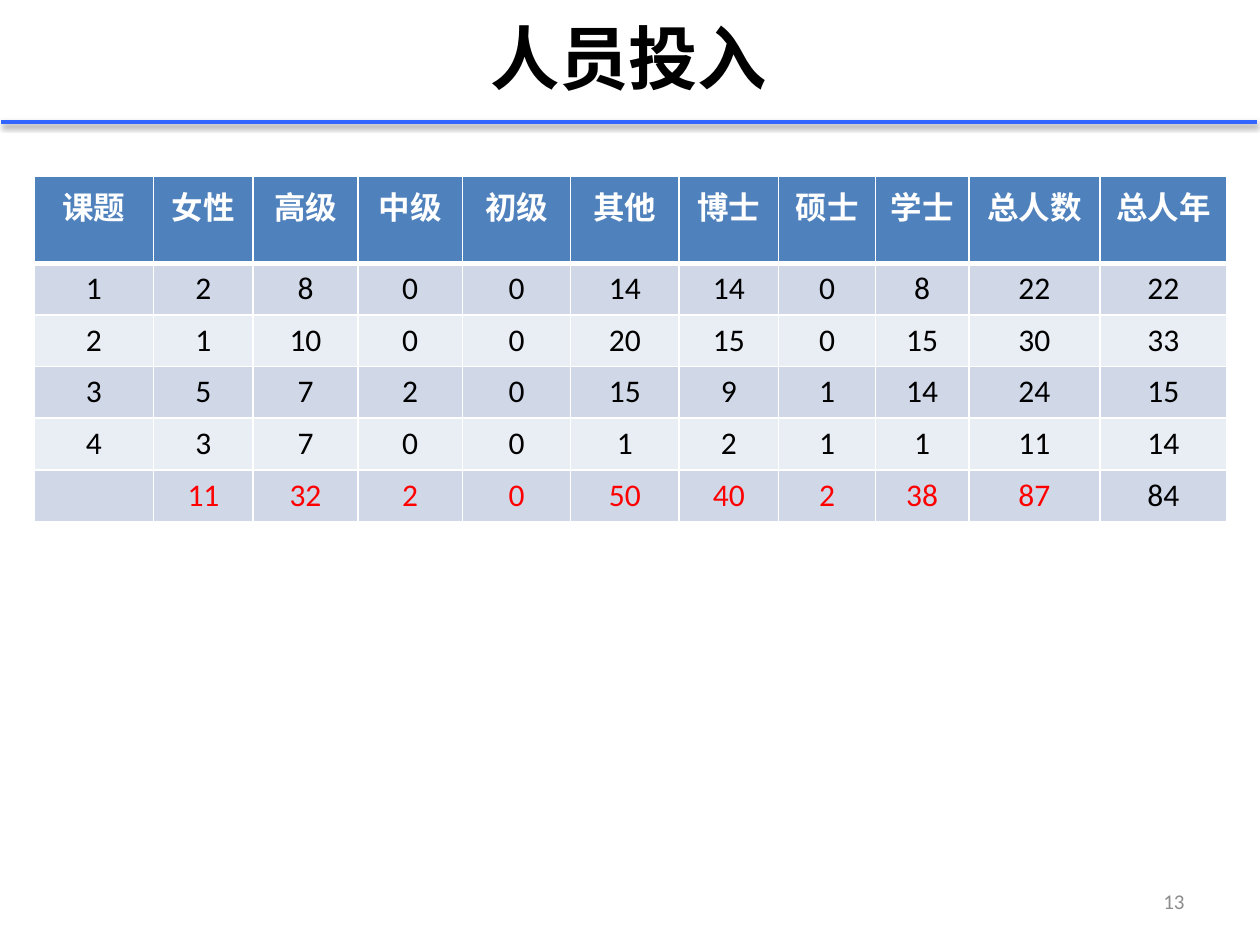
from dataclasses import dataclass

from lxml import etree
from pptx import Presentation
from pptx.dml.color import RGBColor
from pptx.enum.shapes import MSO_CONNECTOR
from pptx.enum.text import MSO_ANCHOR, PP_ALIGN
from pptx.oxml.ns import qn
from pptx.util import Inches, Pt

STRAIGHT = MSO_CONNECTOR.STRAIGHT
MIDDLE = MSO_ANCHOR.MIDDLE
CENTER, RIGHT = PP_ALIGN.CENTER, PP_ALIGN.RIGHT


@dataclass(frozen=True)
class Theme:
    font: str = "Calibri"
    cjk_font: str = "Noto Sans CJK SC"
    title_size: float = 39.6
    table_size: float = 18
    number_size: float = 12
    black: str = "000000"
    white: str = "FFFFFF"
    gray: str = "8C8C8C"
    red: str = "FF0000"
    rule: str = "3366FF"
    header: str = "4F81BD"
    bands: tuple = ("D0D8E8", "E9EDF4")


HEADERS = ["课题", "女性", "高级", "中级", "初级", "其他", "博士", "硕士", "学士",
           "总人数", "总人年"]
STAFF = [
    [1, 2, 8, 0, 0, 14, 14, 0, 8, 22, 22],
    [2, 1, 10, 0, 0, 20, 15, 0, 15, 30, 33],
    [3, 5, 7, 2, 0, 15, 9, 1, 14, 24, 15],
    [4, 3, 7, 0, 0, 1, 2, 1, 1, 11, 14],
]
TOTALS = ["", 11, 32, 2, 0, 50, 40, 2, 38, 87, 84]
COL_WIDTHS = [0.95, 0.79, 0.83, 0.83, 0.86, 0.86, 0.79, 0.77, 0.74, 1.04, 1.01]
HEADER_HEIGHT, ROW_HEIGHT = 0.69, 0.41


class SlideBuilder:
    def __init__(self, slide, theme):
        self.s = slide
        self.theme = theme

    def add_text(self, tf, text, color, align=CENTER, **formats):
        """Put one formatted run in the first paragraph of a text frame."""
        p = tf.paragraphs[0]
        p.alignment = align
        if text == "":
            return
        r = p.add_run()
        r.text = str(text)
        values = {"name": self.theme.font, "bold": False} | formats
        for name, value in values.items():
            setattr(r.font, name, value)
        r.font.color.rgb = RGBColor.from_string(color)
        ea = etree.SubElement(r.font._element, qn("a:ea"))
        ea.set("typeface", self.theme.cjk_font)

    def text_box(self, box, text, color, align=CENTER, **formats):
        sp = self.s.shapes.add_textbox(*map(Inches, box))
        tf = sp.text_frame
        tf.word_wrap = True
        tf.vertical_anchor = MIDDLE
        self.add_text(tf, text, color, align, **formats)

    def rule(self, x1, x2, y):
        sp = self.s.shapes.add_connector(
            STRAIGHT, Inches(x1), Inches(y), Inches(x2), Inches(y))
        sp.line.color.rgb = RGBColor.from_string(self.theme.rule)
        sp.line.width = Pt(2)
        # Soft shadow straight below the line
        effects = etree.SubElement(sp._element.spPr, qn("a:effectLst"))
        shadow = etree.SubElement(
            effects, qn("a:outerShdw"), blurRad=str(Pt(3.1)),
            dist=str(Pt(1.6)), dir="5400000", rotWithShape="0")
        clr = etree.SubElement(shadow, qn("a:srgbClr"), val=self.theme.black)
        etree.SubElement(clr, qn("a:alpha"), val="38000")

    def borders(self, cell, **widths):
        tcPr = cell._tc.get_or_add_tcPr()
        for side in "LRTB":
            ln = etree.SubElement(tcPr, qn(f"a:ln{side}"),
                                  w=str(Pt(widths.get(side, 1))))
            fill = etree.SubElement(ln, qn("a:solidFill"))
            etree.SubElement(fill, qn("a:srgbClr"), val=self.theme.white)

    def table(self, left, top, headers, rows, totals):
        t = self.theme
        data = [headers, *rows, totals]
        heights = [HEADER_HEIGHT] + [ROW_HEIGHT] * (len(data) - 1)
        table = self.s.shapes.add_table(
            len(data), len(headers), Inches(left), Inches(top),
            Inches(sum(COL_WIDTHS)), Inches(sum(heights))).table
        for col, width in zip(table.columns, COL_WIDTHS):
            col.width = Inches(width)
        for row, height in zip(table.rows, heights):
            row.height = Inches(height)

        last_row, last_col = len(data) - 1, len(headers) - 1
        for i, values in enumerate(data):
            for j, value in enumerate(values):
                cell = table.cell(i, j)
                # A thick border parts the header from the body
                self.borders(cell, **{0: {"B": 3}, 1: {"T": 3}}.get(i, {}))
                fill, color = t.bands[(i - 1) % 2], t.black
                if i == 0:
                    fill, color = t.header, t.white
                elif i == last_row and j < last_col:
                    color = t.red
                cell.fill.solid()
                cell.fill.fore_color.rgb = RGBColor.from_string(fill)
                self.add_text(cell.text_frame, value, color,
                              size=Pt(t.table_size), bold=i == 0)


def main():
    prs = Presentation()
    prs.slide_width, prs.slide_height = Inches(10), Inches(7.5)
    theme = Theme()
    s = SlideBuilder(prs.slides.add_slide(prs.slide_layouts[6]), theme)

    # Title and rule
    s.rule(0.01, 9.98, 0.97)
    s.text_box((0.01, 0.06, 9.96, 0.78), "人员投入", theme.black,
               name=theme.cjk_font, size=Pt(theme.title_size), bold=True)

    # Slide number
    s.text_box((7.17, 6.95, 2.33, 0.4), "13", theme.gray, RIGHT,
               size=Pt(theme.number_size))

    # Staff table
    s.table(0.27, 1.4, HEADERS, STAFF, TOTALS)

    prs.save("out.pptx")


if __name__ == "__main__":
    main()
